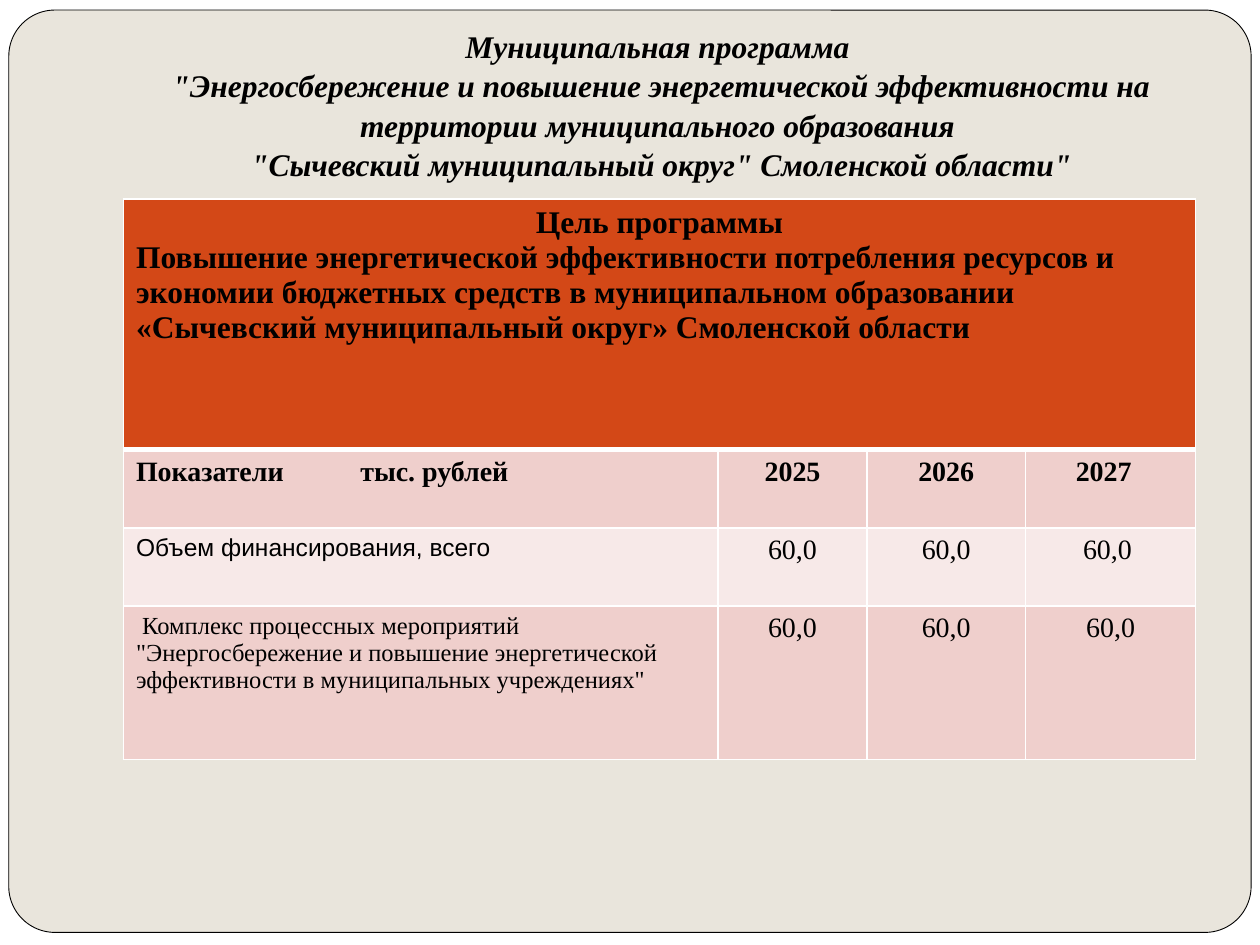
import pptx
import pptx.util
import pptx.dml.color
import pptx.enum.shapes
import pptx.enum.text
import pptx.oxml.ns
import lxml.etree

Inches = pptx.util.Inches
Align = pptx.enum.text.PP_ALIGN
qn = pptx.oxml.ns.qn

COLORS = {
    "white": "FFFFFF",
    "black": "000000",
    "panel": "E9E5DC",
    "goal": "D34817",
    "band_dark": "EFCFCC",
    "band_light": "F7E9E8",
}
SERIF = "Times New Roman"
TITLE = (
    "Муниципальная программа \v"
    "\"Энергосбережение и повышение энергетической эффективности на "
    "территории муниципального образования \v"
    "\"Сычевский муниципальный округ\" Смоленской области\""
)
GOAL_HEADING = "Цель программы"
GOAL = (
    "Повышение энергетической эффективности потребления ресурсов и экономии "
    "бюджетных средств в муниципальном образовании «Сычевский муниципальный "
    "округ» Смоленской области"
)
MEASURES = (
    " Комплекс процессных мероприятий \"Энергосбережение и повышение "
    "энергетической эффективности в муниципальных учреждениях\""
)
COLUMN_WIDTHS = [4.72, 1.18, 1.26, 1.35]
ROW_HEIGHTS = [1.99, 0.62, 0.62, 1.22]


def color(name):
    return pptx.dml.color.RGBColor.from_string(COLORS[name])


def format_para(para, size, bold=False, italic=False, name=SERIF, align=Align.LEFT):
    para.alignment = align
    para.font.size = pptx.util.Pt(size)
    para.font.bold = bold
    para.font.italic = italic
    para.font.name = name
    para.font.color.rgb = color("black")


def add_panel(page):
    page.background.fill.solid()
    page.background.fill.fore_color.rgb = color("white")
    panel = page.shapes.add_shape(
        pptx.enum.shapes.MSO_SHAPE.ROUNDED_RECTANGLE,
        Inches(0.07), Inches(0.08), Inches(9.86), Inches(7.32),
    )
    panel.adjustments[0] = 0.05
    panel.shadow.inherit = False
    panel.fill.solid()
    panel.fill.fore_color.rgb = color("panel")
    panel.line.color.rgb = color("black")
    panel.line.width = pptx.util.Pt(0.5)
    page.shapes._spTree.insert(2, panel._element)


def set_title(page):
    title = page.shapes.title
    title.left, title.top = Inches(1), Inches(0.3)
    title.width, title.height = Inches(8.5), Inches(1.25)
    frame = title.text_frame
    frame.text = TITLE
    frame.word_wrap = True
    frame.auto_size = pptx.enum.text.MSO_AUTO_SIZE.NONE
    frame.vertical_anchor = pptx.enum.text.MSO_ANCHOR.BOTTOM
    frame.margin_left = frame.margin_right = frame.margin_bottom = Inches(0.1)
    frame.margin_top = Inches(0.05)
    para = frame.paragraphs[0]
    format_para(para, 18, bold=True, italic=True, align=Align.CENTER)
    para.line_spacing = 1.04
    para.space_before = pptx.util.Pt(0)


def set_borders(cell, top=1, bottom=1):
    properties = cell._tc.get_or_add_tcPr()
    sides = [("a:lnL", 1), ("a:lnR", 1), ("a:lnT", top), ("a:lnB", bottom)]
    for position, (tag, width) in enumerate(sides):
        line = lxml.etree.Element(qn(tag), w=str(pptx.util.Pt(width)))
        fill = lxml.etree.SubElement(line, qn("a:solidFill"))
        lxml.etree.SubElement(fill, qn("a:srgbClr"), val=COLORS["white"])
        properties.insert(position, line)


def add_tab_stop(para, position):
    stops = lxml.etree.SubElement(para._p.get_or_add_pPr(), qn("a:tabLst"))
    lxml.etree.SubElement(stops, qn("a:tab"), pos=str(Inches(position)), algn="l")


def fill_goal(cell):
    cell.text = f"{GOAL_HEADING}\n{GOAL}"
    heading, goal = cell.text_frame.paragraphs
    format_para(heading, 18, bold=True, align=Align.CENTER)
    format_para(goal, 18, bold=True)


def fill_row(table, row, label, values, label_size, label_font=SERIF, bold=False):
    label_cell = table.cell(row, 0)
    label_cell.text = label
    format_para(label_cell.text_frame.paragraphs[0], label_size, bold, name=label_font)
    for column, value in enumerate(values, start=1):
        cell = table.cell(row, column)
        cell.text = value
        format_para(cell.text_frame.paragraphs[0], 16, bold, align=Align.CENTER)


def add_program_table(page):
    table = page.shapes.add_table(
        len(ROW_HEIGHTS), len(COLUMN_WIDTHS),
        Inches(0.98), Inches(1.58), Inches(8.52), Inches(4.45),
    ).table
    for column, width in zip(table.columns, COLUMN_WIDTHS):
        column.width = Inches(width)
    for row, height in zip(table.rows, ROW_HEIGHTS):
        row.height = Inches(height)
    fills = ["goal", "band_dark", "band_light", "band_dark"]
    for index, fill in enumerate(fills):
        for cell in table.rows[index].cells:
            cell.fill.solid()
            cell.fill.fore_color.rgb = color(fill)
            set_borders(cell, top=3 if index == 1 else 1, bottom=3 if index == 0 else 1)
    table.cell(0, 0).merge(table.cell(0, 3))
    fill_goal(table.cell(0, 0))
    amounts = ["60,0"] * 3
    fill_row(table, 1, "Показатели\tтыс. рублей", ["2025", "2026", "2027"], 16, bold=True)
    fill_row(table, 2, "Объем финансирования, всего", amounts, 14, label_font="Arial")
    fill_row(table, 3, MEASURES, amounts, 14)
    add_tab_stop(table.cell(1, 0).text_frame.paragraphs[0], 1.78)
    table.cell(1, 3).margin_right = Inches(0.21)
    table.cell(2, 3).margin_right = Inches(0.15)


def main():
    deck = pptx.Presentation()
    deck.slide_width, deck.slide_height = Inches(10), Inches(7.5)
    page = deck.slides.add_slide(deck.slide_layouts[5])
    add_panel(page)
    set_title(page)
    add_program_table(page)
    deck.save("out.pptx")


if __name__ == "__main__":
    main()
